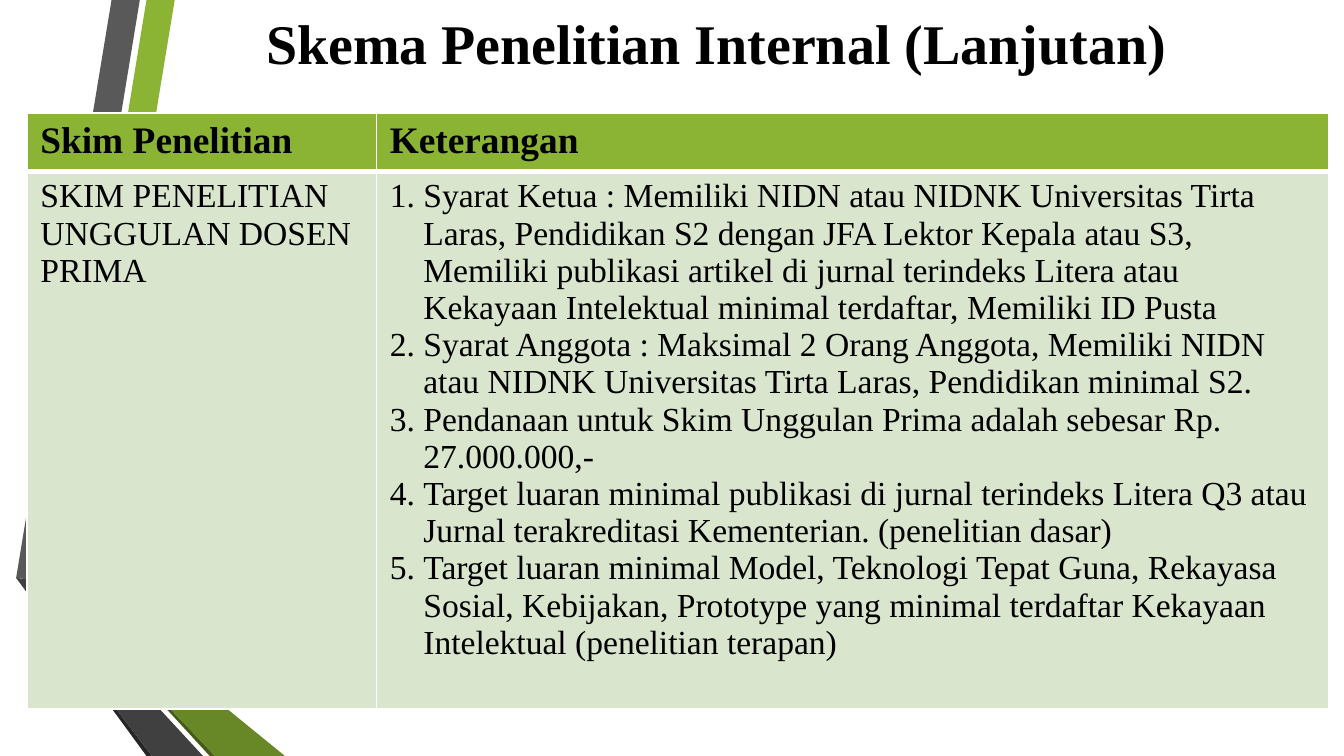
from dataclasses import dataclass

from lxml.etree import SubElement as Sub
from pptx import Presentation
from pptx.dml.color import RGBColor as RGB
from pptx.enum.text import MSO_ANCHOR as Anchor, PP_ALIGN as Align
from pptx.oxml.ns import qn
from pptx.util import Emu, Inches, Pt

# The grid has 100 columns across the slide; its rows are as tall as columns are wide
WIDTH = Inches(10)
HEIGHT = Emu(WIDTH * 9 // 16)
UNIT = WIDTH // 100
END = HEIGHT / UNIT


@dataclass(frozen=True)
class Theme:
    font: str = "Times New Roman"
    ink: str = "000000"
    rule: str = "FFFFFF"
    head: str = "8BB434"
    body: str = "DAE5CE"
    title: int = 30
    label: int = 20
    text: int = 18


@dataclass(frozen=True)
class Band:
    color: str
    points: tuple[tuple[float, float], ...]


@dataclass(frozen=True)
class Cell:
    lines: tuple[str, ...]
    fill: str
    size: int
    bold: bool = False
    listed: bool = False
    base: int = 1


THEME = Theme()

# Folded ribbons, from back to front
BANDS = (
    Band(THEME.head, ((3.8, 43.4), (5.8, 43.7), (13, 0), (10.9, 0))),
    Band("595959", ((10.4, 0), (8.3, 0), (1.2, 43), (3.3, 43.3))),
    Band("262626", ((1.2, 43), (10.9, END), (11.3, END))),
    Band("465A1A", ((3.8, 43.4), (15.6, END), (16, END))),
    Band("688727", ((3.8, 43.4), (16, END), (21.2, END), (5.8, 43.7))),
    Band("404040", ((15.1, END), (3.6, 43.8), (3.2, 43.3), (1.2, 43), (11.3, END))),
)

TERMS = (
    "Syarat Ketua : Memiliki NIDN atau NIDNK Universitas Tirta Laras, "
    "Pendidikan S2 dengan JFA Lektor Kepala atau S3, Memiliki publikasi artikel "
    "di jurnal terindeks Litera atau Kekayaan Intelektual minimal terdaftar, "
    "Memiliki ID Pusta",
    "Syarat Anggota : Maksimal 2 Orang Anggota, Memiliki NIDN atau NIDNK "
    "Universitas Tirta Laras, Pendidikan minimal S2.",
    "Pendanaan untuk Skim Unggulan Prima adalah sebesar Rp. 27.000.000,-",
    "Target luaran minimal publikasi di jurnal terindeks Litera Q3 atau Jurnal "
    "terakreditasi Kementerian. (penelitian dasar)",
    "Target luaran minimal Model, Teknologi Tepat Guna, Rekayasa Sosial, "
    "Kebijakan, Prototype yang minimal terdaftar Kekayaan Intelektual "
    "(penelitian terapan)",
)

COLS = (26, 70.9)
ROWS = (4.3, 39.8)
CELLS = (
    tuple(Cell((name,), THEME.head, THEME.label, bold=True, base=3)
          for name in ("Skim Penelitian", "Keterangan")),
    (Cell(("SKIM PENELITIAN UNGGULAN DOSEN PRIMA",), THEME.body, THEME.text),
     Cell(TERMS, THEME.body, THEME.text, listed=True)),
)


def grid(*cells: float) -> list[Emu]:
    return [Emu(round(n * UNIT)) for n in cells]


def style(para, size: int, bold: bool) -> None:
    for run in para.runs:
        font = run.font
        font.name, font.size, font.bold = THEME.font, Pt(size), bold
        font.color.rgb = RGB.from_string(THEME.ink)


def number(para) -> None:
    props = para._p.get_or_add_pPr()
    props.set("marL", str(Inches(0.25)))
    props.set("indent", str(-Inches(0.25)))
    Sub(props, qn("a:buFont"), typeface="+mj-lt")
    Sub(props, qn("a:buAutoNum"), type="arabicPeriod")


def edge(box, base: int) -> None:
    props = box._tc.get_or_add_tcPr()
    for side, width in (("L", 1), ("R", 1), ("T", 1), ("B", base)):
        line = Sub(props, qn(f"a:ln{side}"), w=str(Pt(width)))
        Sub(Sub(line, qn("a:solidFill")), qn("a:srgbClr"), val=THEME.rule)


def draw_band(slide, band: Band) -> None:
    first, *rest = [grid(*point) for point in band.points]
    path = slide.shapes.build_freeform(*first)
    path.add_line_segments(rest, close=True)
    shape = path.convert_to_shape()
    shape.shadow.inherit = False
    shape.fill.solid()
    shape.fill.fore_color.rgb = RGB.from_string(band.color)
    shape.line.fill.background()


def draw_title(slide, text: str) -> None:
    frame = slide.shapes.add_textbox(*grid(12.2, 0, 82.2, 6.3)).text_frame
    frame.word_wrap = True
    frame.vertical_anchor = Anchor.MIDDLE
    frame.text = text
    para = frame.paragraphs[0]
    para.alignment = Align.CENTER
    style(para, THEME.title, True)


def fill_cell(box, cell: Cell) -> None:
    edge(box, cell.base)
    box.fill.solid()
    box.fill.fore_color.rgb = RGB.from_string(cell.fill)
    box.text_frame.text = "\n".join(cell.lines)
    for para in box.text_frame.paragraphs:
        style(para, cell.size, cell.bold)
        if cell.listed:
            number(para)


def draw_table(slide) -> None:
    area = grid(2, 8.4, sum(COLS), sum(ROWS))
    table = slide.shapes.add_table(len(ROWS), len(COLS), *area).table
    for col, width in zip(table.columns, grid(*COLS)):
        col.width = width
    for row, height, cells in zip(table.rows, grid(*ROWS), CELLS):
        row.height = height
        for box, cell in zip(row.cells, cells):
            fill_cell(box, cell)


def main() -> None:
    deck = Presentation()
    deck.slide_width, deck.slide_height = WIDTH, HEIGHT
    slide = deck.slides.add_slide(deck.slide_layouts[6])
    for band in BANDS:
        draw_band(slide, band)
    draw_title(slide, "Skema Penelitian Internal (Lanjutan)")
    draw_table(slide)
    deck.save("out.pptx")


if __name__ == "__main__":
    main()
